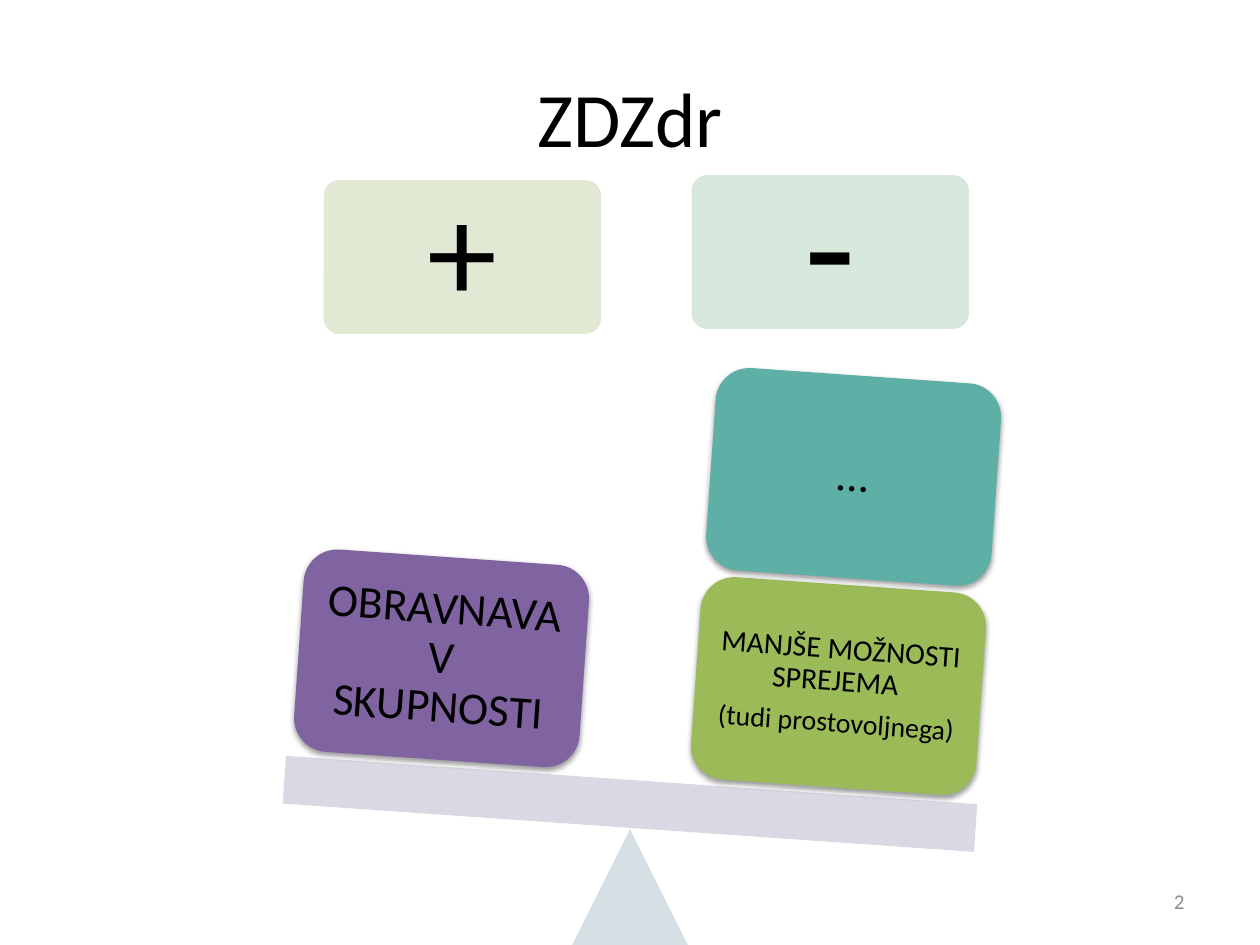
from lxml import etree
from pptx import Presentation
from pptx.dml.color import RGBColor
from pptx.enum.shapes import MSO_SHAPE
from pptx.enum.text import MSO_ANCHOR, PP_ALIGN
from pptx.oxml import parse_xml
from pptx.oxml.ns import qn
from pptx.util import Inches, Pt

ROUNDED = MSO_SHAPE.ROUNDED_RECTANGLE
RECTANGLE = MSO_SHAPE.RECTANGLE
TRIANGLE = MSO_SHAPE.ISOSCELES_TRIANGLE
CENTER, RIGHT = PP_ALIGN.CENTER, PP_ALIGN.RIGHT
MIDDLE = MSO_ANCHOR.MIDDLE

BLACK = RGBColor(0x00, 0x00, 0x00)
GRAY = RGBColor(0x8C, 0x8C, 0x8C)
PALE_OLIVE = RGBColor(0xDE, 0xE7, 0xD1)
PALE_GREEN = RGBColor(0xD2, 0xE5, 0xD9)
PALE_BLUE = RGBColor(0xD2, 0xDC, 0xE2)
PALE_PURPLE = RGBColor(0xD8, 0xD3, 0xE0)
GREEN = RGBColor(0x9B, 0xBB, 0x59)
TEAL = RGBColor(0x5E, 0xAF, 0xA6)
PURPLE = RGBColor(0x80, 0x64, 0xA2)

FONT = "Calibri"
TILT = 4
PALE_ALPHA = 90
HEADER_SIZE = (2.2, 1.22)
WEIGHT_SIZE = (2.27, 1.61)

# Content: paragraphs are (text, point size)
TITLE = "ZDZdr"
SLIDE_NUMBER = "2"
HEADERS = [  # left, top, colour, inset, paragraphs
    (2.57, 1.43, PALE_OLIVE, 0.33, [("+", 80)]),
    (5.49, 1.39, PALE_GREEN, 0.4, [("-", 96)]),
]
SCALE_PARTS = [  # preset, box, rotation, colour
    (TRIANGLE, (4.54, 6.58, 0.92, 0.92), 0, PALE_BLUE),
    (RECTANGLE, (2.25, 6.19, 5.5, 0.38), TILT, PALE_PURPLE),
]
WEIGHTS = [  # left, top, colour, inset, paragraphs
    (5.52, 4.64, GREEN, 0.07,
     [("MANJŠE MOŽNOSTI SPREJEMA ", 17), ("(tudi prostovoljnega)", 16)]),
    (5.64, 2.98, TEAL, 0.11, [("…", 26)]),
    (2.37, 4.42, PURPLE, 0.11, [("OBRAVNAVA V SKUPNOSTI", 26)]),
]

SHADOW = (
    '<a:effectLst xmlns:a="http://schemas.openxmlformats.org/drawingml/2006/main">'
    f'<a:outerShdw blurRad="{Pt(3.1)}" dist="{Pt(1.6)}" dir="5400000" rotWithShape="0">'
    '<a:srgbClr val="000000"><a:alpha val="38000"/></a:srgbClr>'
    '</a:outerShdw></a:effectLst>'
)


def add_run(paragraph, text, size, color=BLACK):
    run = paragraph.add_run()
    run.text = text
    run.font.name = FONT
    run.font.size = Pt(size)
    run.font.color.rgb = color


def add_block(slide, preset, box, color, rotation=0, alpha=100):
    shape = slide.shapes.add_shape(preset, *map(Inches, box))
    shape.rotation = rotation
    shape.shadow.inherit = False
    shape.line.fill.background()
    shape.fill.solid()
    shape.fill.fore_color.rgb = color
    if alpha < 100:
        rgb = shape.fill._xPr.find(qn("a:solidFill")).find(qn("a:srgbClr"))
        etree.SubElement(rgb, qn("a:alpha")).set("val", str(alpha * 1000))
    return shape


def write_label(shape, inset, paragraphs):
    frame = shape.text_frame
    frame.word_wrap = True
    frame.vertical_anchor = MIDDLE
    frame.margin_left = frame.margin_right = Inches(inset)
    frame.margin_top = frame.margin_bottom = Inches(inset)
    for index, (text, size) in enumerate(paragraphs):
        paragraph = frame.add_paragraph() if index else frame.paragraphs[0]
        paragraph.alignment = CENTER
        paragraph.line_spacing = 0.9
        if index < len(paragraphs) - 1:
            paragraph.space_after = Pt(round(0.35 * size))
        add_run(paragraph, text, size)


def cast_shadow(shape):
    properties = shape._element.spPr
    properties.replace(properties.find(qn("a:effectLst")), parse_xml(SHADOW))


def main():
    presentation = Presentation()
    presentation.slide_width, presentation.slide_height = Inches(10), Inches(7.5)
    slide = presentation.slides.add_slide(presentation.slide_layouts[5])

    # Title
    title = slide.shapes.title
    title.left, title.top = Inches(0.5), Inches(0.3)
    title.width, title.height = Inches(9), Inches(1.25)
    title.text_frame.vertical_anchor = MIDDLE
    title.text_frame.paragraphs[0].alignment = CENTER
    add_run(title.text_frame.paragraphs[0], TITLE, 44)

    # Plus and minus headers
    for left, top, color, inset, paragraphs in HEADERS:
        header = add_block(slide, ROUNDED, (left, top, *HEADER_SIZE), color,
                           alpha=PALE_ALPHA)
        header.adjustments[0] = 0.1
        write_label(header, inset, paragraphs)

    # Fulcrum and tilted beam
    for preset, box, rotation, color in SCALE_PARTS:
        add_block(slide, preset, box, color, rotation, PALE_ALPHA)

    # Weights resting on the beam
    for left, top, color, inset, paragraphs in WEIGHTS:
        weight = add_block(slide, ROUNDED, (left, top, *WEIGHT_SIZE), color, TILT)
        cast_shadow(weight)
        write_label(weight, inset, paragraphs)

    # Slide number
    number = slide.shapes.add_textbox(*map(Inches, (7.17, 6.95, 2.33, 0.4)))
    number.text_frame.word_wrap = True
    number.text_frame.vertical_anchor = MIDDLE
    number.text_frame.paragraphs[0].alignment = RIGHT
    add_run(number.text_frame.paragraphs[0], SLIDE_NUMBER, 12, GRAY)

    presentation.save("out.pptx")


if __name__ == "__main__":
    main()
